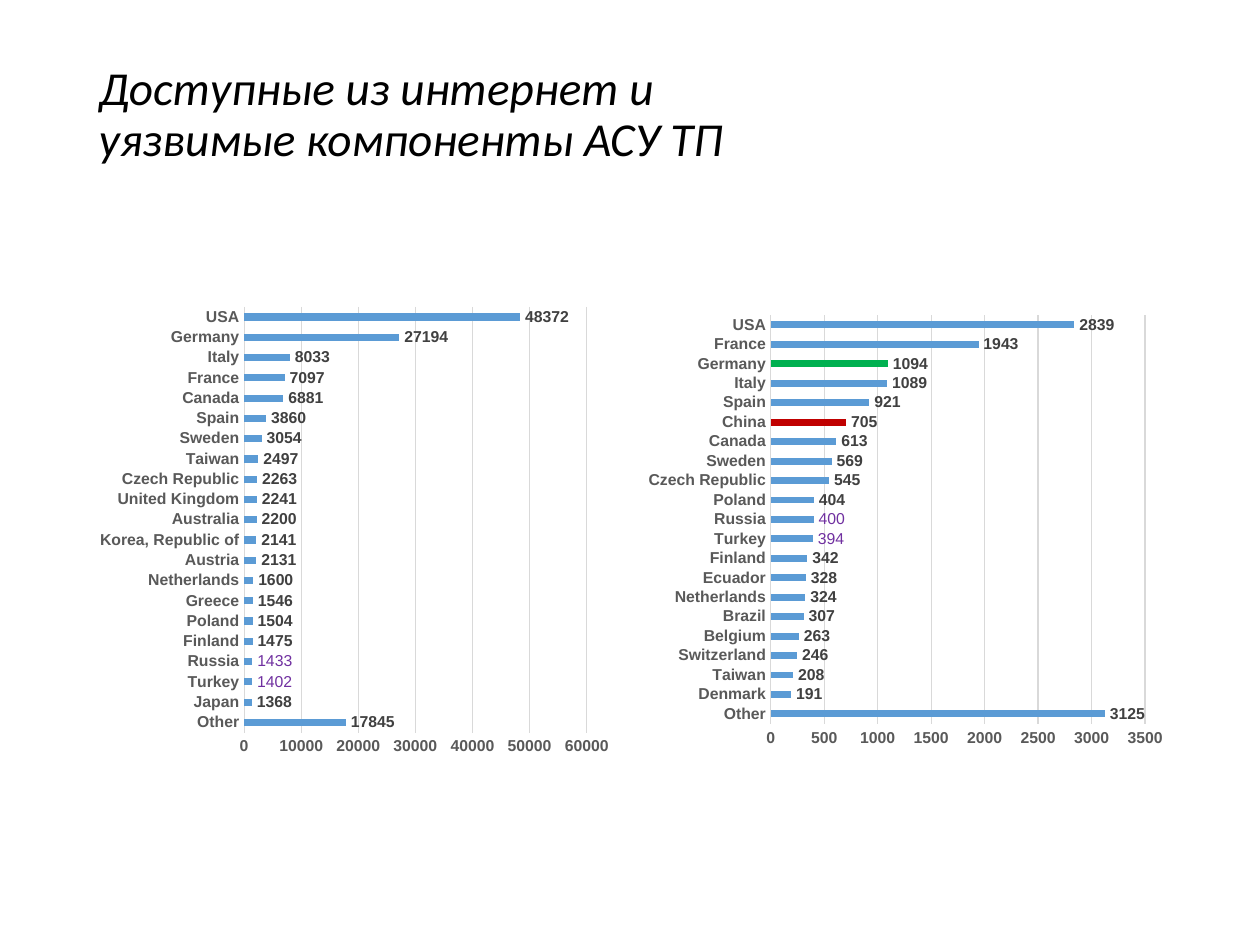
import pptx
import pptx.util
import pptx.chart.data
import pptx.dml.color
import pptx.enum.chart
import pptx.enum.text
import pptx.oxml

Pt = pptx.util.Pt
enum = pptx.enum.chart


def tint(code):
    return pptx.dml.color.RGBColor.from_string(code)


def style(font, color, bold=True):
    font.name = "Arial"
    font.size = Pt(9)
    font.bold = bold
    font.color.rgb = tint(color)


deck = pptx.Presentation()
deck.slide_width, deck.slide_height = Pt(720), Pt(540)
slide = deck.slides.add_slide(deck.slide_layouts[6])

title = slide.shapes.add_textbox(Pt(49.5), Pt(28.8), Pt(621), Pt(104.4))
frame = title.text_frame
frame.word_wrap = True
frame.vertical_anchor = pptx.enum.text.MSO_ANCHOR.MIDDLE
frame.margin_bottom = Pt(33)
frame.text = "Доступные из интернет и \vуязвимые компоненты АСУ ТП"
line = frame.paragraphs[0]
line.line_spacing = 0.9
line.font.name = "Calibri"
line.font.size = Pt(27)
line.font.italic = True
line.font.color.rgb = tint("000000")

found = {
    "Other": 17845, "Japan": 1368, "Turkey": 1402, "Russia": 1433,
    "Finland": 1475, "Poland": 1504, "Greece": 1546, "Netherlands": 1600,
    "Austria": 2131, "Korea, Republic of": 2141, "Australia": 2200,
    "United Kingdom": 2241, "Czech Republic": 2263, "Taiwan": 2497,
    "Sweden": 3054, "Spain": 3860, "Canada": 6881, "France": 7097,
    "Italy": 8033, "Germany": 27194, "USA": 48372,
}
weak = {
    "Other": 3125, "Denmark": 191, "Taiwan": 208, "Switzerland": 246,
    "Belgium": 263, "Brazil": 307, "Netherlands": 324, "Ecuador": 328,
    "Finland": 342, "Turkey": 394, "Russia": 400, "Poland": 404,
    "Czech Republic": 545, "Sweden": 569, "Canada": 613, "China": 705,
    "Spain": 921, "Italy": 1089, "Germany": 1094, "France": 1943,
    "USA": 2839,
}
panels = [
    (49.5, found, 60000, 10000, {}),
    (364.5, weak, 3500, 500, {"China": "C00000", "Germany": "00B050"}),
]
charts = []
for left, counts, top, step, marks in panels:
    data = pptx.chart.data.CategoryChartData(number_format="0")
    data.categories = list(counts)
    data.add_series("Series 1", list(counts.values()))
    chart = slide.shapes.add_chart(
        enum.XL_CHART_TYPE.BAR_CLUSTERED,
        Pt(left), Pt(175), Pt(306), Pt(257), data).chart
    charts.append(chart)
    chart.has_legend = False
    chart.has_title = False
    chart.font.name = "Arial"
    chart.font.size = Pt(10)
    chart.font.bold = True
    chart.font.color.rgb = tint("000000")

    names, scale = chart.category_axis, chart.value_axis
    for axis in (names, scale):
        axis.major_tick_mark = enum.XL_TICK_MARK.NONE
        axis.minor_tick_mark = enum.XL_TICK_MARK.NONE
        style(axis.tick_labels.font, "595959")
    names.has_major_gridlines = False
    scale.has_major_gridlines = True
    scale.minimum_scale, scale.maximum_scale = 0, top
    scale.major_unit = step
    scale.format.line.fill.background()
    for rule in (names.format.line, scale.major_gridlines.format.line):
        rule.color.rgb = tint("D9D9D9")
        rule.width = Pt(0.75)

    plot = chart.plots[0]
    plot.vary_by_categories = False
    plot.gap_width = 182
    bars = plot.series[0]
    bars.format.fill.solid()
    bars.format.fill.fore_color.rgb = tint("5B9BD5")
    labels = bars.data_labels
    labels.show_value = True
    labels.position = enum.XL_LABEL_POSITION.OUTSIDE_END
    style(labels.font, "404040")
    for index, name in enumerate(counts):
        if name in marks:
            fill = bars.points[index].format.fill
            fill.solid()
            fill.fore_color.rgb = tint(marks[name])
        if name in ("Russia", "Turkey"):
            label = bars.points[index].data_label
            style(label.font, "7030A0", False)
            label.position = enum.XL_LABEL_POSITION.OUTSIDE_END

area = charts[0].plots[0]._element.getparent()
for old in area.findall(pptx.oxml.ns.qn("c:layout")):
    area.remove(old)
area.insert(0, pptx.oxml.parse_xml(
    f'<c:layout {pptx.oxml.ns.nsdecls("c")}><c:manualLayout>'
    '<c:layoutTarget val="outer"/>'
    '<c:xMode val="edge"/><c:yMode val="edge"/>'
    '<c:x val="0.025"/><c:y val="0"/><c:w val="0.95"/><c:h val="1"/>'
    '</c:manualLayout></c:layout>'))

deck.save("out.pptx")
